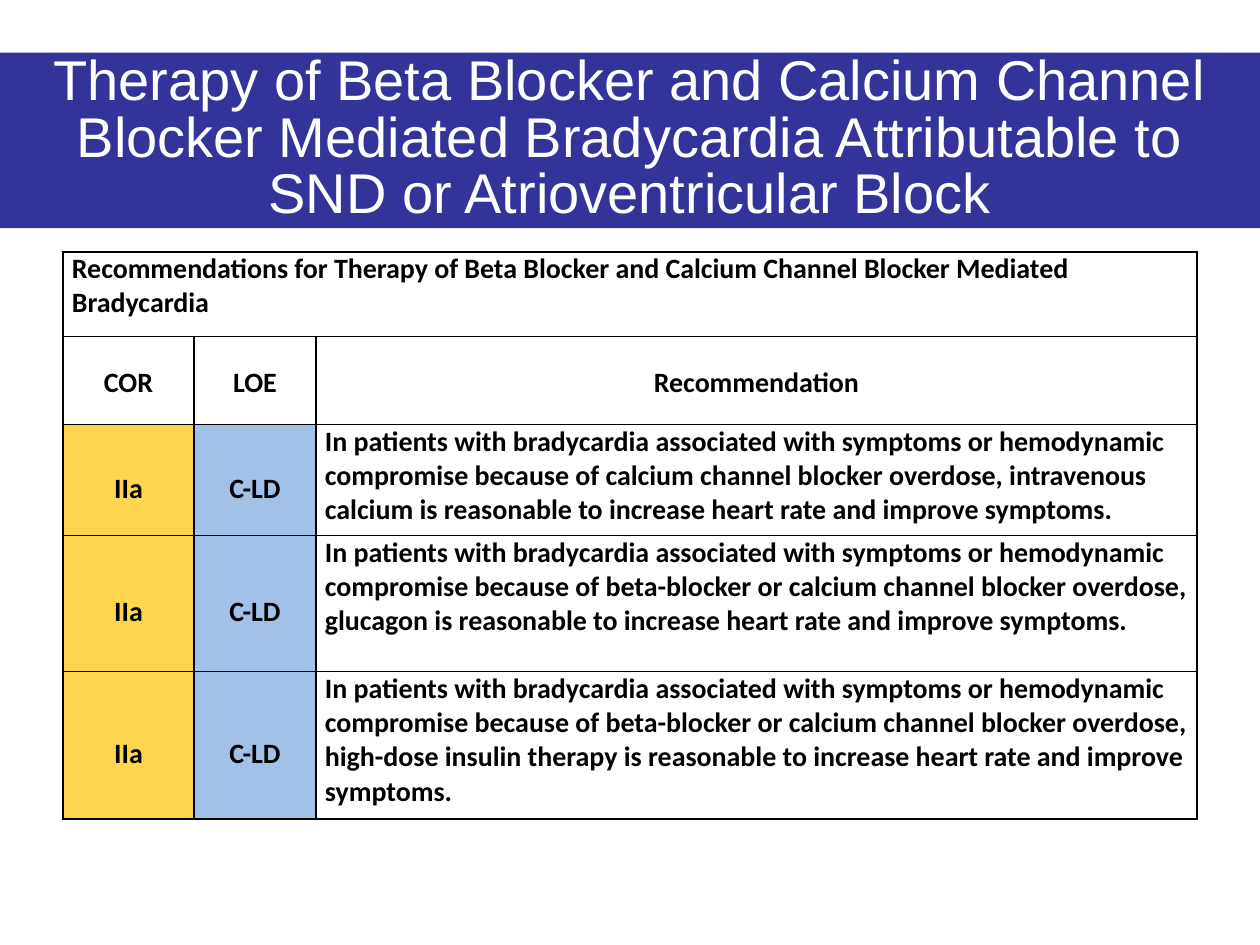
from dataclasses import dataclass

from lxml.etree import SubElement
from pptx import Presentation
from pptx.dml.color import RGBColor
from pptx.enum.shapes import MSO_SHAPE
from pptx.enum.text import MSO_ANCHOR, PP_ALIGN
from pptx.oxml import parse_xml
from pptx.oxml.ns import nsdecls, qn
from pptx.util import Cm, Pt

NAVY = RGBColor(0x33, 0x33, 0x99)
WHITE = RGBColor(0xFF, 0xFF, 0xFF)
BLACK = RGBColor(0, 0, 0)
GOLD = RGBColor(0xFF, 0xD5, 0x4F)
SKY = RGBColor(0xA1, 0xC1, 0xE7)

TITLE = ("Therapy of Beta Blocker and Calcium Channel Blocker Mediated "
         "Bradycardia Attributable to SND or Atrioventricular Block")
CAPTION = ("Recommendations for Therapy of Beta Blocker and Calcium Channel "
           "Blocker Mediated Bradycardia")
HEADS = ("COR", "LOE", "Recommendation")
WIDTHS = (2.64, 2.46, 17.76)
HEIGHTS = (1.7, 1.78, 2.24, 2.74, 2.97)


@dataclass
class Advice:
    cause: str
    drug: str
    cor: str = "IIa"
    loe: str = "C-LD"

    def text(self) -> str:
        return ("In patients with bradycardia associated with symptoms or "
                f"hemodynamic compromise because of {self.cause} overdose, "
                f"{self.drug} is reasonable to increase heart rate and "
                "improve symptoms.")


BOTH = "beta-blocker or calcium channel blocker"
ADVICE = (
    Advice("calcium channel blocker", "intravenous calcium"),
    Advice(BOTH, "glucagon"),
    Advice(BOTH, "high-dose insulin therapy"),
)


def write(frame, text: str, *, size=16, face="Calibri", color=BLACK,
          bold=True, align=PP_ALIGN.LEFT, space=1.0) -> None:
    frame.word_wrap = True
    para = frame.paragraphs[0]
    para.alignment = align
    para.line_spacing = space
    run = para.add_run()
    run.text = text
    font = run.font
    font.size, font.name, font.bold = Pt(size), face, bold
    font.color.rgb = color


def edge(cell) -> None:
    """Draw a thin black line on all four sides of a cell."""
    props = cell._tc.get_or_add_tcPr()
    for spot, side in enumerate(("lnL", "lnR", "lnT", "lnB")):
        line = parse_xml(f'<a:{side} {nsdecls("a")} w="{Pt(1)}"/>')
        fill = SubElement(line, qn("a:solidFill"))
        SubElement(fill, qn("a:srgbClr"), val=str(BLACK))
        props.insert(spot, line)


def fill_cell(cell, text: str, *, fill=None, middle=True, space=1.0) -> None:
    cell.margin_left = cell.margin_right = Cm(0.18)
    cell.margin_top = cell.margin_bottom = 0
    cell.vertical_anchor = MSO_ANCHOR.MIDDLE if middle else MSO_ANCHOR.TOP
    if fill is not None:
        cell.fill.solid()
        cell.fill.fore_color.rgb = fill
    write(cell.text_frame, text, space=space,
          align=PP_ALIGN.CENTER if middle else PP_ALIGN.LEFT)


def add_title(slide) -> None:
    band = slide.shapes.add_shape(
        MSO_SHAPE.RECTANGLE, 0, Cm(1.06), Cm(25.4), Cm(3.54))
    band.shadow.inherit = False
    band.fill.solid()
    band.fill.fore_color.rgb = NAVY
    band.line.fill.background()
    write(band.text_frame, TITLE, size=32, face="Arial", color=WHITE,
          bold=False, align=PP_ALIGN.CENTER, space=0.84)


def add_grid(slide) -> None:
    grid = slide.shapes.add_table(
        len(HEIGHTS), len(WIDTHS), Cm(1.27), Cm(5.08),
        Cm(sum(WIDTHS)), Cm(sum(HEIGHTS))).table
    grid.first_row = grid.horz_banding = False
    for col, width in zip(grid.columns, WIDTHS):
        col.width = Cm(width)
    for row, height in zip(grid.rows, HEIGHTS):
        row.height = Cm(height)
    for cell in grid.iter_cells():
        cell.fill.background()

    grid.cell(0, 0).merge(grid.cell(0, len(WIDTHS) - 1))
    fill_cell(grid.cell(0, 0), CAPTION, middle=False)
    for col, head in enumerate(HEADS):
        fill_cell(grid.cell(1, col), head, space=1.15)
    for row, item in enumerate(ADVICE, start=2):
        fill_cell(grid.cell(row, 0), item.cor, fill=GOLD, space=1.5)
        fill_cell(grid.cell(row, 1), item.loe, fill=SKY, space=1.5)
        fill_cell(grid.cell(row, 2), item.text(), middle=False)
    for cell in grid.iter_cells():
        edge(cell)


def main() -> None:
    deck = Presentation()
    deck.slide_width, deck.slide_height = Cm(25.4), Cm(19.05)
    slide = deck.slides.add_slide(deck.slide_layouts[6])
    add_title(slide)
    add_grid(slide)
    deck.save("out.pptx")


if __name__ == "__main__":
    main()
